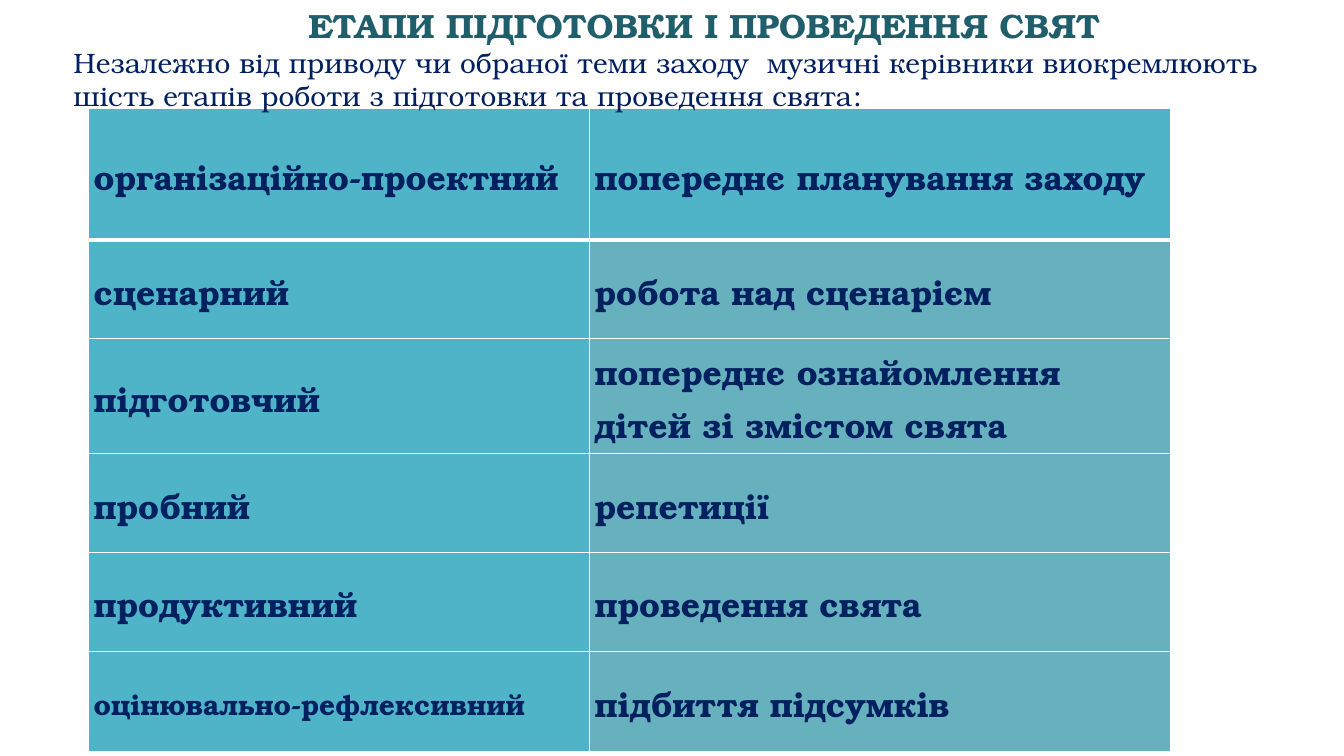
from lxml import etree
from pptx import Presentation
from pptx.dml.color import RGBColor
from pptx.enum.text import MSO_ANCHOR, PP_ALIGN
from pptx.oxml.ns import qn
from pptx.util import Pt

TOP, MIDDLE = MSO_ANCHOR.TOP, MSO_ANCHOR.MIDDLE
CENTER, LEFT = PP_ALIGN.CENTER, PP_ALIGN.LEFT
FONT = "TeX Gyre Bonum"
COLORS = {"title": "215E6B", "text": "002060", "stage": "50B4C8",
          "work": "66B1BD", "rule": "FFFFFF"}
COLS = (357.84, 414.72)
ROWS = (93.6, 70.56, 72, 70.56, 70.56, 72)
STAGES = (
    ("організаційно-проектний", "попереднє планування заходу"),
    ("сценарний", "робота над сценарієм"),
    ("підготовчий", "попереднє ознайомлення дітей зі змістом свята"),
    ("пробний", "репетиції"),
    ("продуктивний", "проведення свята"),
    ("оцінювально-рефлексивний", "підбиття підсумків"),
)


def add_run(para, text, size, color, bold):
    """Add one styled run to a paragraph."""
    run = para.add_run()
    run.text = text
    font = run.font
    font.name, font.size, font.bold = FONT, Pt(size), bold
    font.color.rgb = RGBColor.from_string(COLORS[color])


def add_rule(cell, side, width, place):
    """Draw one cell border."""
    line = etree.Element(qn(f"a:ln{side}"), w=str(Pt(width)))
    fill = etree.SubElement(line, qn("a:solidFill"))
    etree.SubElement(fill, qn("a:srgbClr"), val=COLORS["rule"])
    cell._tc.get_or_add_tcPr().insert(place, line)


def fill_cell(cell, text, size, color, rules):
    """Set the text, fill and borders of a cell."""
    cell.vertical_anchor = MIDDLE
    cell.margin_left = cell.margin_right = Pt(3.6)
    cell.margin_top = cell.margin_bottom = Pt(3.6)
    cell.fill.solid()
    cell.fill.fore_color.rgb = RGBColor.from_string(COLORS[color])
    para = cell.text_frame.paragraphs[0]
    para.line_spacing, para.space_after = 1.07, Pt(8)
    add_run(para, text, size, "text", True)
    for place, (side, width) in enumerate(rules.items()):
        add_rule(cell, side, width, place)


def add_stages(slide):
    """Add the table of stages."""
    table = slide.shapes.add_table(
        len(ROWS), len(COLS), Pt(63.36), Pt(77.76),
        Pt(sum(COLS)), Pt(sum(ROWS))).table
    for col, width in zip(table.columns, COLS):
        col.width = Pt(width)
    for r, (row, height) in enumerate(zip(table.rows, ROWS)):
        row.height = Pt(height)
        rules = {"L": 1, "R": 1, "T": 3 if r == 1 else 1,
                 "B": 3 if r == 0 else 1}
        for c, text in enumerate(STAGES[r]):
            last = r == len(ROWS) - 1 and c == 0
            color = "work" if r and c else "stage"
            fill_cell(table.cell(r, c), text, 20 if last else 24, color, rules)


def add_intro(slide):
    """Add the title and the opening sentence."""
    box = slide.shapes.add_textbox(Pt(45.36), 0, Pt(915.12), Pt(106.56))
    frame = box.text_frame
    frame.word_wrap, frame.vertical_anchor = True, TOP
    head, lead = frame.paragraphs[0], frame.add_paragraph()
    head.alignment, lead.alignment = CENTER, LEFT
    add_run(head, "ЕТАПИ ПІДГОТОВКИ І ПРОВЕДЕННЯ СВЯТ", 24, "title", True)
    add_run(lead, "Незалежно від приводу чи обраної теми заходу  музичні "
            "керівники виокремлюють шість етапів роботи з підготовки "
            "та проведення свята:", 20, "text", False)


def main():
    """Build and save the slide."""
    deck = Presentation()
    deck.slide_width, deck.slide_height = Pt(960), Pt(540)
    slide = deck.slides.add_slide(deck.slide_layouts[6])
    add_stages(slide)
    add_intro(slide)
    deck.save("out.pptx")


if __name__ == "__main__":
    main()
